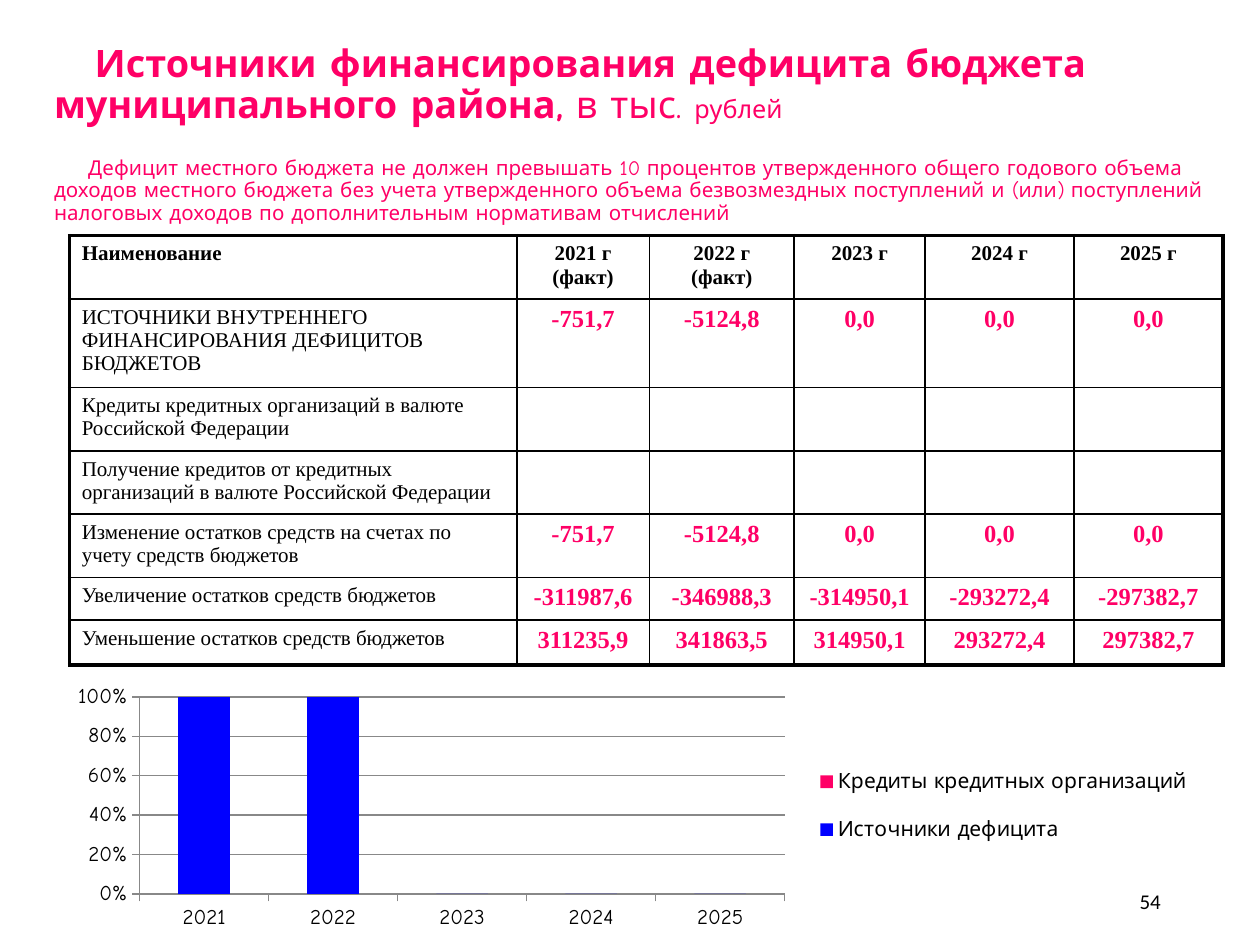
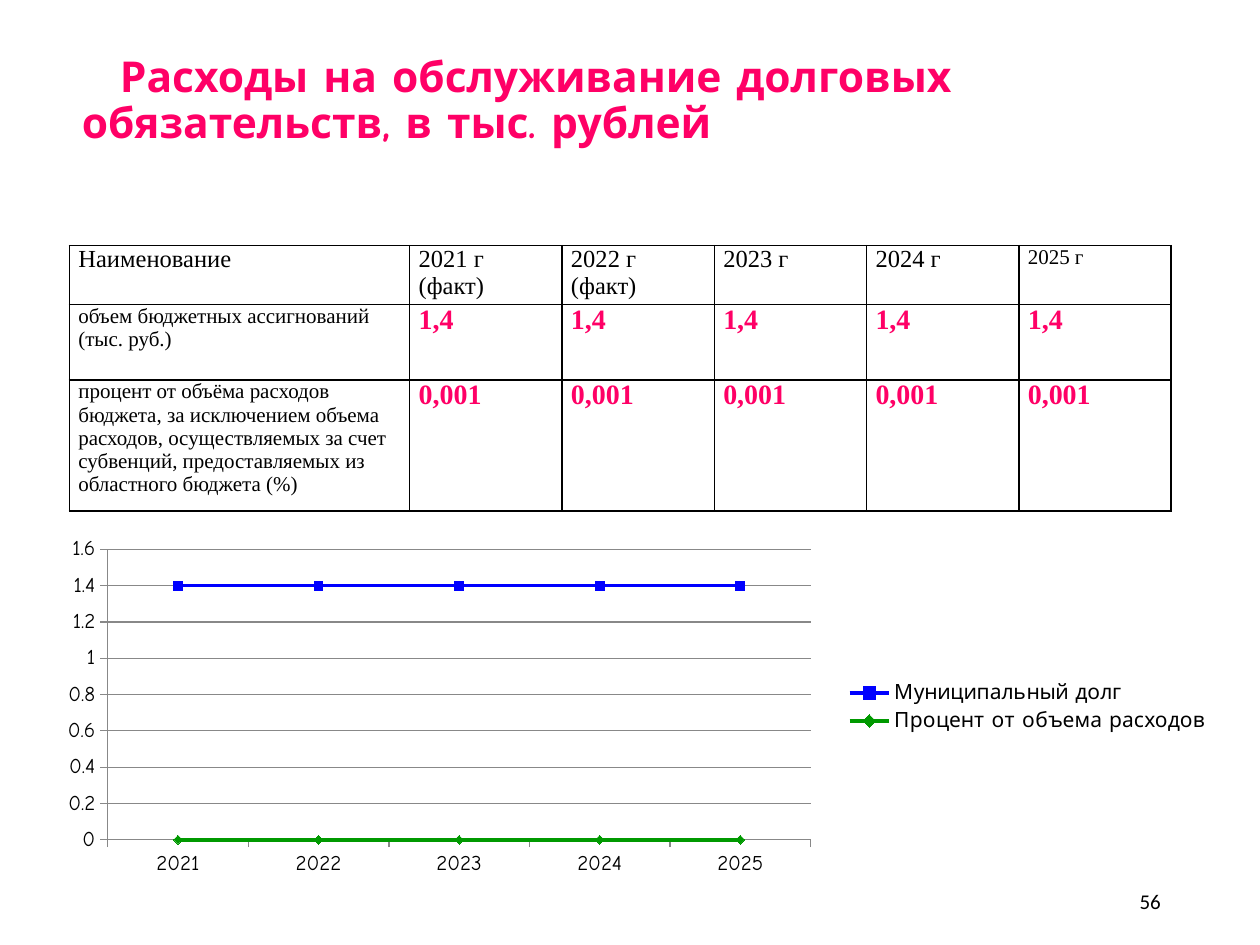
from dataclasses import dataclass
from typing import Any, Optional

import lxml.etree
import pptx
import pptx.chart.data
import pptx.dml.color
import pptx.enum.chart
import pptx.enum.text
import pptx.oxml.ns
import pptx.util

Cm = pptx.util.Cm
Pt = pptx.util.Pt
RGBColor = pptx.dml.color.RGBColor
Align = pptx.enum.text.PP_ALIGN
ChartType = pptx.enum.chart.XL_CHART_TYPE
Marker = pptx.enum.chart.XL_MARKER_STYLE
qn = pptx.oxml.ns.qn

PINK = RGBColor(0xFF, 0x00, 0x66)
BLUE = RGBColor(0x00, 0x00, 0xFF)
GREEN = RGBColor(0x00, 0x99, 0x00)
BLACK = RGBColor(0x00, 0x00, 0x00)
GREY = RGBColor(0x88, 0x88, 0x88)

TITLE_FONT = "Comic Neue"
TABLE_FONT = "Times New Roman"
NUMBER_FONT = "Calibri"
YEARS = ("2021", "2022", "2023", "2024", "2025")
HEADER = ("Наименование", "2021 г (факт)", "2022 г (факт)", "2023 г", "2024 г", "2025 г")

Format = dict[str, Any]
CHART_TEXT: Format = {"size": Pt(12), "name": TITLE_FONT, "rgb": BLACK}


@dataclass(frozen=True)
class Box:
    """A place on the slide, in centimetres."""
    left: float
    top: float
    width: float
    height: float

    def lengths(self) -> tuple[pptx.util.Length, ...]:
        return Cm(self.left), Cm(self.top), Cm(self.width), Cm(self.height)


@dataclass(frozen=True)
class Run:
    text: str
    size: float
    bold: bool = False


@dataclass(frozen=True)
class TitleParagraph:
    runs: tuple[Run, ...]
    indent: float
    space_before: float = 0


@dataclass(frozen=True)
class BudgetTable:
    box: Box
    columns: tuple[float, ...]
    row_heights: tuple[float, ...]
    rows: tuple[tuple[str, ...], ...]
    header_sizes: tuple[float, ...]
    header_bold: bool
    value_size: float
    value_align: Align
    margins: tuple[float, float]
    outline: float


@dataclass(frozen=True)
class Series:
    name: str
    values: tuple[Optional[float], ...]
    color: RGBColor
    marker: Optional[Marker] = None


@dataclass(frozen=True)
class BudgetChart:
    """The plot and legend layouts are fractions: x, y, width, height."""
    box: Box
    kind: ChartType
    number_format: str
    series: tuple[Series, ...]
    plot_layout: tuple[float, ...]
    legend_layout: tuple[float, ...]


@dataclass(frozen=True)
class BudgetSlide:
    number: str
    title_box: Box
    title_bottom: float
    title: tuple[TitleParagraph, ...]
    table: BudgetTable
    chart: BudgetChart


def set_font(font: Any, values: Format) -> None:
    for attribute, value in values.items():
        if attribute == "rgb":
            font.color.rgb = value
        else:
            setattr(font, attribute, value)


def add_text_frame(slide: Any, box: Box) -> Any:
    frame = slide.shapes.add_textbox(*box.lengths()).text_frame
    frame.word_wrap = True
    frame.vertical_anchor = pptx.enum.text.MSO_ANCHOR.MIDDLE
    return frame


def add_title(slide: Any, content: BudgetSlide) -> None:
    frame = add_text_frame(slide, content.title_box)
    frame.margin_bottom = Cm(content.title_bottom)
    for index, part in enumerate(content.title):
        paragraph = frame.add_paragraph() if index else frame.paragraphs[0]
        paragraph.line_spacing = 0.9
        if part.space_before:
            paragraph.space_before = Pt(part.space_before)
        paragraph._p.get_or_add_pPr().set("indent", str(Cm(part.indent)))
        for piece in part.runs:
            run = paragraph.add_run()
            run.text = piece.text
            set_font(run.font, {"size": Pt(piece.size), "name": TITLE_FONT,
                                "bold": piece.bold, "rgb": PINK})


def add_page_number(slide: Any, number: str) -> None:
    paragraph = add_text_frame(slide, Box(17.93, 17.65, 5.72, 1.02)).paragraphs[0]
    paragraph.alignment = Align.RIGHT
    run = paragraph.add_run()
    run.text = number
    set_font(run.font, {"size": Pt(12), "name": NUMBER_FONT, "rgb": BLACK})


def set_borders(cell: Any, widths: dict[str, float]) -> None:
    """Put border lines, widths in points, ahead of the cell's fill."""
    properties = cell._tc.get_or_add_tcPr()
    for position, (side, width) in enumerate(widths.items()):
        line = lxml.etree.Element(qn(f"a:{side}"), w=str(Pt(width)))
        fill = lxml.etree.SubElement(line, qn("a:solidFill"))
        lxml.etree.SubElement(fill, qn("a:srgbClr"), val=str(BLACK))
        properties.insert(position, line)


def cell_format(content: BudgetTable, row: int, column: int) -> Format:
    if row == 0:
        size, bold, color = content.header_sizes[column], content.header_bold, BLACK
    elif column == 0:
        size, bold, color = 12, False, BLACK
    else:
        size, bold, color = content.value_size, True, PINK
    return {"size": Pt(size), "name": TABLE_FONT, "bold": bold, "rgb": color}


def add_budget_table(slide: Any, content: BudgetTable) -> None:
    rows = (HEADER, *content.rows)
    last_row, last_column = len(rows) - 1, len(HEADER) - 1
    table = slide.shapes.add_table(len(rows), len(HEADER), *content.box.lengths()).table
    table.first_row = table.horz_banding = False
    for column, width in zip(table.columns, content.columns):
        column.width = Cm(width)
    for row, height in zip(table.rows, content.row_heights):
        row.height = Cm(height)

    side_margin, end_margin = map(Cm, content.margins)
    for r, texts in enumerate(rows):
        for c, text in enumerate(texts):
            cell = table.cell(r, c)
            cell.margin_left = cell.margin_right = side_margin
            cell.margin_top = cell.margin_bottom = end_margin
            cell.fill.background()
            on_edge = {"lnL": c == 0, "lnR": c == last_column,
                       "lnT": r == 0, "lnB": r == last_row}
            set_borders(cell, {side: content.outline if edge else 1
                               for side, edge in on_edge.items()})
            if text:
                paragraph = cell.text_frame.paragraphs[0]
                paragraph.alignment = content.value_align if c else Align.LEFT
                run = paragraph.add_run()
                run.text = text
                set_font(run.font, cell_format(content, r, c))


def set_layout(element: Any, fractions: tuple[float, ...], inner: bool = False) -> None:
    """Fix the place of a plot area or legend within its chart."""
    layout = element.get_or_add_layout() if hasattr(element, "get_or_add_layout") else None
    if layout is None:
        layout = element.find(qn("c:layout"))
    if layout is None:
        layout = lxml.etree.Element(qn("c:layout"))
        position = element.find(qn("c:legendPos"))
        element.insert(0 if position is None else element.index(position) + 1, layout)
    for child in list(layout):
        layout.remove(child)
    manual = lxml.etree.SubElement(layout, qn("c:manualLayout"))
    settings = {"layoutTarget": "inner"} if inner else {}
    settings |= {"xMode": "edge", "yMode": "edge"}
    settings |= {key: str(value) for key, value in zip("xywh", fractions)}
    for tag, value in settings.items():
        lxml.etree.SubElement(manual, qn(f"c:{tag}"), val=value)


def format_series(drawn: Any, series: Series) -> None:
    if series.marker is None:
        drawn.invert_if_negative = False
        fills = [drawn.format.fill]
    else:
        drawn.smooth = False
        drawn.format.line.color.rgb = series.color
        drawn.format.line.width = Pt(2)
        drawn.marker.style = series.marker
        drawn.marker.size = 5
        drawn.marker.format.line.color.rgb = series.color
        fills = [drawn.marker.format.fill]
    for fill in fills:
        fill.solid()
        fill.fore_color.rgb = series.color


def add_budget_chart(slide: Any, content: BudgetChart) -> None:
    data = pptx.chart.data.CategoryChartData()
    data.categories = YEARS
    for series in content.series:
        data.add_series(series.name, series.values)
    chart = slide.shapes.add_chart(content.kind, *content.box.lengths(), data).chart
    set_font(chart.font, CHART_TEXT)
    chart.has_title = False
    chart.has_legend = True
    chart.legend.position = pptx.enum.chart.XL_LEGEND_POSITION.RIGHT
    chart.legend.include_in_layout = False
    set_font(chart.legend.font, CHART_TEXT)

    plot = chart.plots[0]
    plot.vary_by_categories = False
    if content.kind == ChartType.COLUMN_STACKED_100:
        plot.gap_width, plot.overlap = 150, 100
    for drawn, series in zip(plot.series, content.series):
        format_series(drawn, series)

    for axis in (chart.category_axis, chart.value_axis):
        axis.major_tick_mark = pptx.enum.chart.XL_TICK_MARK.OUTSIDE
        axis.minor_tick_mark = pptx.enum.chart.XL_TICK_MARK.NONE
        axis.format.line.color.rgb = GREY
        set_font(axis.tick_labels.font, CHART_TEXT)
    chart.value_axis.has_major_gridlines = True
    chart.value_axis.major_gridlines.format.line.color.rgb = GREY
    chart.value_axis.tick_labels.number_format = content.number_format
    chart.value_axis.tick_labels.number_format_is_linked = False

    set_layout(chart._chartSpace.chart.plotArea, content.plot_layout, inner=True)
    set_layout(chart.legend._element, content.legend_layout)


BALANCE = ("-751,7", "-5124,8", "0,0", "0,0", "0,0")
NO_VALUES = ("",) * len(YEARS)

DEFICIT = BudgetSlide(
    "54", Box(0.84, 1.27, 24.13, 2.9), 0.13,
    (TitleParagraph((Run("Источники финансирования дефицита бюджета муниципального района,", 21.6, True),
                     Run(" в тыс. ", 21.6), Run("рублей", 14.4)), 0.82),
     TitleParagraph((Run("Дефицит местного бюджета не должен превышать 10 процентов утвержденного общего "
                         "годового объема доходов местного бюджета без учета утвержденного объема "
                         "безвозмездных поступлений и (или) поступлений налоговых доходов по "
                         "дополнительным нормативам отчислений", 11.7),), 0.69, 18)),
    BudgetTable(
        Box(1.4, 4.75, 23.22, 8.92), (9.02, 2.67, 2.92, 2.64, 3, 3),
        (0.58, 1.42, 1.04, 1.14, 1.07, 0.69, 0.91),
        (("ИСТОЧНИКИ ВНУТРЕННЕГО ФИНАНСИРОВАНИЯ ДЕФИЦИТОВ БЮДЖЕТОВ", *BALANCE),
         ("Кредиты кредитных организаций в валюте Российской Федерации", *NO_VALUES),
         ("Получение кредитов от кредитных организаций в валюте Российской Федерации", *NO_VALUES),
         ("Изменение остатков средств на счетах по учету средств бюджетов", *BALANCE),
         ("Увеличение остатков средств бюджетов",
          "-311987,6", "-346988,3", "-314950,1", "-293272,4", "-297382,7"),
         ("Уменьшение остатков средств бюджетов",
          "311235,9", "341863,5", "314950,1", "293272,4", "297382,7")),
        (12,) * 6, True, 14, Align.CENTER, (0.25, 0.13), 2.25),
    BudgetChart(
        Box(1.19, 13.69, 23.22, 5.16), ChartType.COLUMN_STACKED_100, "0%",
        (Series("Источники дефицита", (-100, -100, 0, 0, 0), BLUE),
         Series("Кредиты кредитных организаций", (None,) * 5, PINK)),
        (0.07, 0.07, 0.56, 0.77), (0.65, 0.26, 0.34, 0.47)))

DEBT = BudgetSlide(
    "56", Box(1.4, 1.27, 20.65, 2.34), 0.91,
    (TitleParagraph((Run("Расходы на обслуживание долговых обязательств, в тыс. рублей", 24.3, True),),
                    0.77),),
    BudgetTable(
        Box(1.4, 4.95, 22.23, 5.36), (6.86,) + (3.07,) * 5, (1.19, 1.52, 2.64),
        (("объем бюджетных ассигнований (тыс. руб.)", *("1,4",) * 5),
         ("процент от объёма расходов бюджета, за исключением объема расходов, осуществляемых "
          "за счет субвенций, предоставляемых из областного бюджета (%)", *("0,001",) * 5)),
        (14,) * 5 + (12,), False, 16, Align.LEFT, (0.18, 0), 1),
    BudgetChart(
        Box(0.99, 10.72, 23.62, 7.14), ChartType.LINE_MARKERS, "General",
        (Series("Муниципальный долг", (1.4,) * 5, BLUE, Marker.SQUARE),
         Series("Процент от объема расходов", (0,) * 5, GREEN, Marker.DIAMOND)),
        (0.05, 0.05, 0.6, 0.82), (0.67, 0.41, 0.33, 0.17)))


def main() -> None:
    presentation = pptx.Presentation()
    presentation.slide_width, presentation.slide_height = Cm(25.4), Cm(19.05)
    for content in (DEFICIT, DEBT):
        slide = presentation.slides.add_slide(presentation.slide_layouts[6])
        add_title(slide, content)
        add_page_number(slide, content.number)
        add_budget_table(slide, content.table)
        add_budget_chart(slide, content.chart)
    presentation.save("out.pptx")


if __name__ == "__main__":
    main()
